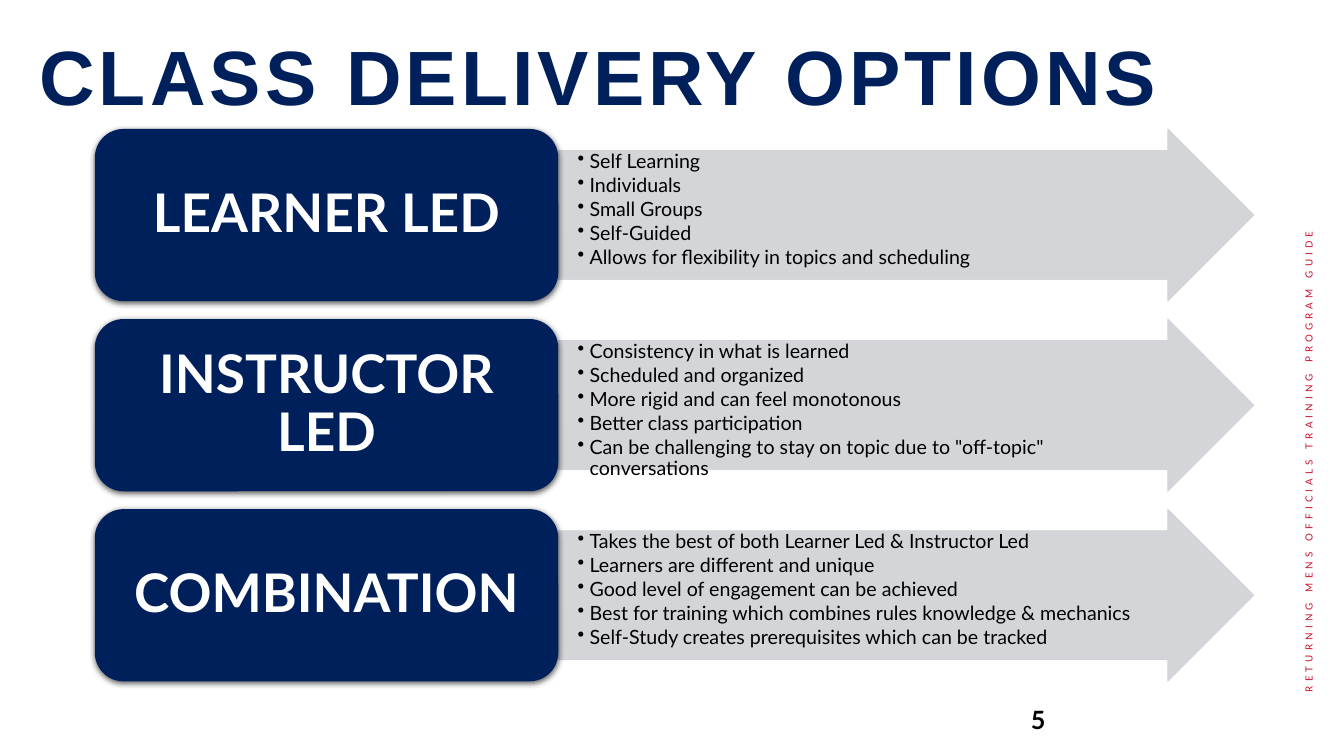
"""Build the slide on class delivery options."""
from dataclasses import dataclass

from lxml import etree
from pptx import Presentation
from pptx import oxml
from pptx import util as u
from pptx.dml import color
from pptx.enum import shapes, text
from pptx.oxml import ns

NAVY, GREY, RED, BLACK, WHITE = "00205B", "CFD1D4", "C8102E", "000000", "FFFFFF"
ROW_TOP, ROW_PITCH, ROW_HEIGHT = 3.25, 4.79, 4.34
LABEL_LEFT, LABEL_WIDTH, ARROW_WIDTH = 2.39, 11.68, 17.53


@dataclass(frozen=True)
class Option:
    """One way of delivering a class, with its traits."""
    label: str
    traits: tuple[str, ...]


@dataclass(frozen=True)
class Style:
    """Character style of a text."""
    size: float
    colour: str
    bold: bool = False
    name: str = "Lato"
    spacing: float = 0


OPTIONS = (
    Option("LEARNER LED", (
        "Self Learning", "Individuals", "Small Groups", "Self-Guided",
        "Allows for flexibility in topics and scheduling")),
    Option("INSTRUCTOR LED", (
        "Consistency in what is learned", "Scheduled and organized",
        "More rigid and can feel monotonous", "Better class participation",
        'Can be challenging to stay on topic due to "off-topic" conversations')),
    Option("COMBINATION", (
        "Takes the best of both Learner Led & Instructor Led",
        "Learners are different and unique",
        "Good level of engagement can be achieved",
        "Best for training which combines rules knowledge & mechanics",
        "Self-Study creates prerequisites which can be tracked")),
)


def apply(target, values: dict) -> None:
    """Set each named attribute of the target."""
    for name, value in values.items():
        setattr(target, name, value)


def rgb(hex_colour: str) -> color.RGBColor:
    """Turn a hex string into a colour."""
    return color.RGBColor.from_string(hex_colour)


def cm_box(left: float, top: float, width: float, height: float) -> tuple:
    """Turn a box in centimetres into lengths."""
    return tuple(u.Cm(side) for side in (left, top, width, height))


def frame_format(frame, anchor, margins: tuple, wrap: bool = True) -> None:
    """Set the anchor, wrapping and margins of a text frame."""
    sides = ("margin_left", "margin_top", "margin_right", "margin_bottom")
    apply(frame, {"word_wrap": wrap, "auto_size": text.MSO_AUTO_SIZE.NONE,
                  "vertical_anchor": anchor,
                  **{side: u.Cm(size) for side, size in zip(sides, margins)}})


def write(paragraph, wording: str, style: Style, **layout) -> None:
    """Write a styled run into a paragraph."""
    apply(paragraph, layout)
    run = paragraph.add_run()
    run.text = wording
    apply(run.font, {"size": u.Pt(style.size), "bold": style.bold, "name": style.name})
    run.font.color.rgb = rgb(style.colour)
    if style.spacing:
        run._r.get_or_add_rPr().set("spc", str(round(style.spacing * 100)))


def add_bullet(paragraph) -> None:
    """Give a paragraph a hanging round bullet."""
    properties = paragraph._p.get_or_add_pPr()
    properties.set("marL", str(u.Cm(0.76)))
    properties.set("indent", str(u.Cm(-0.3)))
    etree.SubElement(properties, ns.qn("a:buChar")).set("char", "•")


def add_arrow(slide, option: Option, top: float) -> None:
    """Draw the grey arrow that lists the traits of an option."""
    arrow = slide.shapes.add_shape(
        shapes.MSO_SHAPE.RIGHT_ARROW,
        *cm_box(LABEL_LEFT + LABEL_WIDTH, top, ARROW_WIDTH, ROW_HEIGHT))
    arrow.shadow.inherit = False
    arrow.adjustments[0], arrow.adjustments[1] = 0.75, 0.5
    arrow.line.width = u.Pt(0.5)
    for fill in (arrow.fill, arrow.line.fill):
        fill.solid()
        fill.fore_color.rgb = rgb(GREY)
    for tint in arrow._element.spPr.iter(ns.qn("a:srgbClr")):
        etree.SubElement(tint, ns.qn("a:alpha")).set("val", "90000")
    frame = arrow.text_frame
    frame_format(frame, text.MSO_ANCHOR.TOP, (0.03, 0.03, 1.1, 0.03))
    for index, trait in enumerate(option.traits):
        paragraph = frame.add_paragraph() if index else frame.paragraphs[0]
        add_bullet(paragraph)
        write(paragraph, trait, Style(14, BLACK), level=1, line_spacing=0.9,
              space_after=u.Pt(2), alignment=text.PP_ALIGN.LEFT)


def add_label(slide, option: Option, top: float) -> None:
    """Draw the navy label that names an option."""
    label = slide.shapes.add_shape(
        shapes.MSO_SHAPE.ROUNDED_RECTANGLE,
        *cm_box(LABEL_LEFT, top, LABEL_WIDTH, ROW_HEIGHT))
    label.fill.solid()
    label.fill.fore_color.rgb = rgb(NAVY)
    label.line.fill.background()
    label.shadow.inherit = False
    label._element.spPr.find(ns.qn("a:effectLst")).append(oxml.parse_xml(
        f'<a:outerShdw {ns.nsdecls("a")} blurRad="{u.Pt(4.5)}" dist="{u.Pt(1.5)}" '
        f'dir="5400000" algn="ctr" rotWithShape="0"><a:srgbClr val="{BLACK}">'
        '<a:alpha val="63000"/></a:srgbClr></a:outerShdw>'))
    frame_format(label.text_frame, text.MSO_ANCHOR.MIDDLE, (0.41, 0.2, 0.41, 0.2))
    write(label.text_frame.paragraphs[0], option.label, Style(38, WHITE, True),
          line_spacing=0.9, alignment=text.PP_ALIGN.CENTER)


def add_note(slide, wording: str, box: tuple, style: Style, rotation: float = 0) -> None:
    """Add a single line of text, turned if asked."""
    note = slide.shapes.add_textbox(*cm_box(*box))
    note.rotation = rotation
    frame_format(note.text_frame, text.MSO_ANCHOR.MIDDLE, (0.25, 0.13, 0.25, 0.13))
    write(note.text_frame.paragraphs[0], wording, style)


def add_title(slide, wording: str) -> None:
    """Place and fill the title placeholder."""
    title = slide.shapes.title
    apply(title, dict(zip(("left", "top", "width", "height"),
                          cm_box(0.74, 0.79, 29.21, 2.46))))
    frame_format(title.text_frame, text.MSO_ANCHOR.MIDDLE, (0.25, 0.13, 0.25, 0.13))
    write(title.text_frame.paragraphs[0], wording, Style(55, NAVY, True, "Arial", 3),
          line_spacing=0.9, alignment=text.PP_ALIGN.LEFT)


def main() -> None:
    """Build and save the slide."""
    deck = Presentation()
    apply(deck, {"slide_width": u.Cm(33.87), "slide_height": u.Cm(19.05)})
    slide = deck.slides.add_slide(deck.slide_layouts.get_by_name("Title Only"))
    add_title(slide, "CLASS DELIVERY OPTIONS")
    for row, option in enumerate(OPTIONS):
        top = ROW_TOP + row * ROW_PITCH
        add_arrow(slide, option, top)
        add_label(slide, option, top)
    add_note(slide, "5", (25.73, 17.63, 7.62, 1.02), Style(18, BLACK, True))
    add_note(slide, "RETURNING MENS OFFICIALS TRAINING PROGRAM GUIDE",
             (26.26, 10.69, 13.44, 0.56), Style(7, RED, spacing=3), 270)
    deck.save("out.pptx")


if __name__ == "__main__":
    main()
